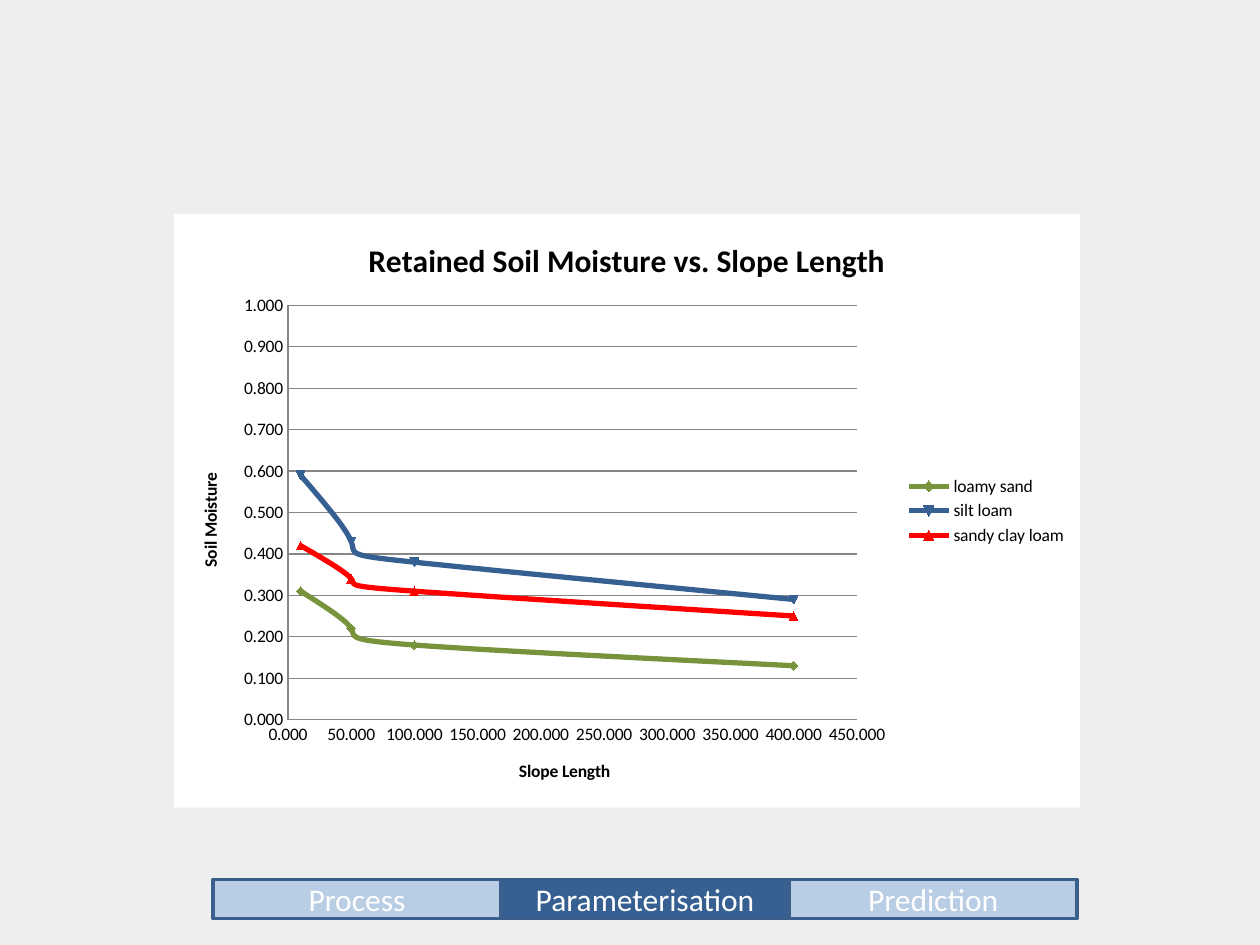
from lxml import etree
from pptx import Presentation
from pptx.chart.data import XyChartData
from pptx.dml.color import RGBColor
from pptx.enum.chart import XL_CHART_TYPE, XL_LEGEND_POSITION, XL_MARKER_STYLE, XL_TICK_MARK
from pptx.enum.shapes import MSO_SHAPE
from pptx.enum.text import MSO_ANCHOR, PP_ALIGN
from pptx.oxml import parse_xml
from pptx.oxml.ns import nsdecls, qn
from pptx.util import Inches, Pt

BACKGROUND = RGBColor(0xEE, 0xEE, 0xEE)
WHITE = RGBColor(0xFF, 0xFF, 0xFF)
BLACK = RGBColor(0, 0, 0)
GREY = RGBColor(0x86, 0x86, 0x86)
GREEN = RGBColor(0x77, 0x93, 0x3C)
BLUE = RGBColor(0x37, 0x60, 0x92)
RED = RGBColor(0xFF, 0, 0)
PALE_BLUE = RGBColor(0xB9, 0xCD, 0xE5)
OUTLINE = RGBColor(0x3A, 0x5F, 0x8C)
FONT = "Calibri"

SLOPE_LENGTHS = [10, 50, 100, 400]
SOILS = [
    ("loamy sand", GREEN, [0.31, 0.22, 0.18, 0.13]),
    ("silt loam", BLUE, [0.59, 0.43, 0.38, 0.29]),
    ("sandy clay loam", RED, [0.42, 0.34, 0.31, 0.25]),
]
STAGES = ["Process", "Parameterisation", "Prediction"]
CURRENT_STAGE = "Parameterisation"


def add_run(p, text, size, color, bold=False):
    r = p.add_run()
    r.text = text
    r.font.name = FONT
    r.font.size = Pt(size)
    r.font.bold = bold
    r.font.color.rgb = color


def set_title(owner, text, size):
    """Title a chart or an axis."""
    owner.has_title = True
    title = owner.chart_title if hasattr(owner, "chart_title") else owner.axis_title
    add_run(title.text_frame.paragraphs[0], text, size, BLACK, bold=True)


def style_axis(axis, title, top, step):
    axis.minimum_scale, axis.maximum_scale, axis.major_unit = 0, top, step
    axis.major_tick_mark = axis.minor_tick_mark = XL_TICK_MARK.NONE
    axis.tick_labels.number_format = "0.000"
    axis.tick_labels.number_format_is_linked = False
    axis.format.line.color.rgb = GREY
    axis.format.line.width = Pt(0.75)
    set_title(axis, title, 10)


def fill_chart_area(chart, color):
    sp_pr = parse_xml(
        f'<c:spPr {nsdecls("c", "a")}><a:solidFill><a:srgbClr val="{color}"/></a:solidFill>'
        "<a:ln><a:noFill/></a:ln></c:spPr>")
    chart._chartSpace.find(qn("c:chart")).addnext(sp_pr)


def place_plot(chart, x, y, w, h):
    """Set the inner plot area, in fractions of the chart."""
    plot_area = chart._chartSpace.find(".//" + qn("c:plotArea"))
    for old in plot_area.findall(qn("c:layout")):
        plot_area.remove(old)
    layout = etree.Element(qn("c:layout"))
    manual = etree.SubElement(layout, qn("c:manualLayout"))
    settings = [("layoutTarget", "inner"), ("xMode", "edge"), ("yMode", "edge"),
                ("x", x), ("y", y), ("w", w), ("h", h)]
    for tag, value in settings:
        etree.SubElement(manual, qn("c:" + tag)).set("val", str(value))
    plot_area.insert(0, layout)


def add_moisture_chart(slide, x, y, w, h):
    data = XyChartData(number_format="0.000")
    for name, _, moistures in SOILS:
        series = data.add_series(name)
        for point in zip(SLOPE_LENGTHS, moistures):
            series.add_data_point(*point)
    chart = slide.shapes.add_chart(
        XL_CHART_TYPE.XY_SCATTER_SMOOTH, x, y, w, h, data).chart
    chart.font.name = FONT
    chart.font.size = Pt(10)
    chart.font.color.rgb = BLACK
    set_title(chart, "Retained Soil Moisture vs. Slope Length", 18)
    chart.has_legend = True
    chart.legend.position = XL_LEGEND_POSITION.RIGHT
    chart.legend.include_in_layout = False

    style_axis(chart.category_axis, "Slope Length", 450, 50)
    style_axis(chart.value_axis, "Soil Moisture", 1, 0.1)
    chart.category_axis.has_major_gridlines = False
    chart.value_axis.has_major_gridlines = True
    grid = chart.value_axis.major_gridlines.format.line
    grid.color.rgb = GREY
    grid.width = Pt(0.75)

    plot = chart.plots[0]
    plot.vary_by_categories = False
    for number, (series, (_, color, _)) in enumerate(zip(plot.series, SOILS), 1):
        # Automatic markers follow the index: diamond, triangle down, triangle up.
        series._element.idx.val = number
        series._element.get_or_add_smooth().val = True
        series.format.line.color.rgb = color
        series.format.line.width = Pt(3)
        marker = series.marker
        marker.style = XL_MARKER_STYLE.AUTOMATIC
        marker.size = 5
        marker.format.fill.solid()
        marker.format.fill.fore_color.rgb = color
        marker.format.line.color.rgb = color
    fill_chart_area(chart, WHITE)
    place_plot(chart, 0.126, 0.154, 0.628, 0.698)


def add_stage_bar(slide, x, y, w, h):
    """Row of equal stages with the current one darker."""
    step = w // len(STAGES)
    for i, stage in enumerate(STAGES):
        sp = slide.shapes.add_shape(MSO_SHAPE.RECTANGLE, x + i * step, y, step, h)
        sp.shadow.inherit = False
        sp.fill.solid()
        sp.fill.fore_color.rgb = BLUE if stage == CURRENT_STAGE else PALE_BLUE
        sp.line.color.rgb = OUTLINE
        sp.line.width = Pt(2)
        tf = sp.text_frame
        tf.word_wrap = True
        tf.vertical_anchor = MSO_ANCHOR.MIDDLE
        p = tf.paragraphs[0]
        p.alignment = PP_ALIGN.CENTER
        add_run(p, stage, 18, WHITE)


def main():
    prs = Presentation()
    prs.slide_width, prs.slide_height = Inches(10), Inches(7.5)
    slide = prs.slides.add_slide(prs.slide_layouts[6])
    slide.background.fill.solid()
    slide.background.fill.fore_color.rgb = BACKGROUND
    add_moisture_chart(slide, Inches(1.38), Inches(1.7), Inches(7.19), Inches(4.71))
    add_stage_bar(slide, Inches(1.69), Inches(6.98), Inches(6.86), Inches(0.31))
    prs.save("out.pptx")


if __name__ == "__main__":
    main()
